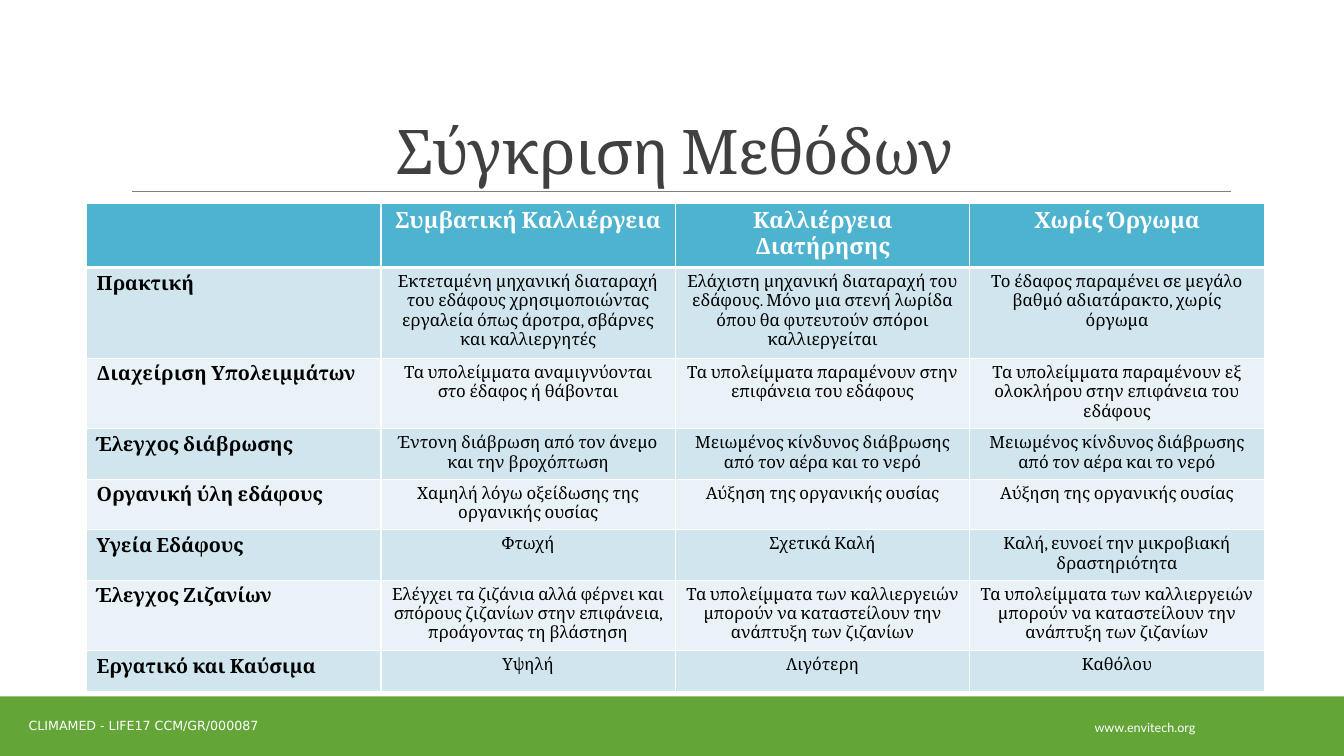
from lxml import etree
from pptx import Presentation
from pptx.dml.color import RGBColor
from pptx.enum.shapes import MSO_CONNECTOR, MSO_SHAPE
from pptx.enum.text import MSO_ANCHOR, PP_ALIGN
from pptx.oxml.ns import qn
from pptx.util import Cm, Pt

LEFT, CENTER = PP_ALIGN.LEFT, PP_ALIGN.CENTER
MIDDLE, BOTTOM = MSO_ANCHOR.MIDDLE, MSO_ANCHOR.BOTTOM
RECTANGLE = MSO_SHAPE.RECTANGLE
STRAIGHT = MSO_CONNECTOR.STRAIGHT

COLORS = {
    "white": "FFFFFF",
    "black": "000000",
    "title": "404040",
    "rule": "808080",
    "footer": "63A537",
    "header": "4EB3CF",
    "band_dark": "D0E5ED",
    "band_light": "E9F2F6",
}

HEADINGS = ["", "Συμβατική Καλλιέργεια", "Καλλιέργεια Διατήρησης", "Χωρίς Όργωμα"]
COMPARISON = [
    ["Πρακτική",
     "Εκτεταμένη μηχανική διαταραχή του εδάφους χρησιμοποιώντας εργαλεία όπως "
     "άροτρα, σβάρνες και καλλιεργητές",
     "Ελάχιστη μηχανική διαταραχή του εδάφους. Μόνο μια στενή λωρίδα όπου θα "
     "φυτευτούν σπόροι καλλιεργείται",
     "Το έδαφος παραμένει σε μεγάλο βαθμό αδιατάρακτο, χωρίς όργωμα"],
    ["Διαχείριση Υπολειμμάτων",
     "Τα υπολείμματα αναμιγνύονται στο έδαφος ή θάβονται",
     "Τα υπολείμματα παραμένουν στην επιφάνεια του εδάφους",
     "Τα υπολείμματα παραμένουν εξ ολοκλήρου στην επιφάνεια του εδάφους"],
    ["Έλεγχος διάβρωσης",
     "Έντονη διάβρωση από τον άνεμο και την βροχόπτωση",
     "Μειωμένος κίνδυνος διάβρωσης από τον αέρα και το νερό",
     "Μειωμένος κίνδυνος διάβρωσης από τον αέρα και το νερό"],
    ["Οργανική ύλη εδάφους",
     "Χαμηλή λόγω οξείδωσης της οργανικής ουσίας",
     "Αύξηση της οργανικής ουσίας",
     "Αύξηση της οργανικής ουσίας"],
    ["Υγεία Εδάφους",
     "Φτωχή",
     "Σχετικά Καλή",
     "Καλή, ευνοεί την μικροβιακή δραστηριότητα"],
    ["Έλεγχος Ζιζανίων",
     "Ελέγχει τα ζιζάνια αλλά φέρνει και σπόρους ζιζανίων στην επιφάνεια, "
     "προάγοντας τη βλάστηση",
     "Τα υπολείμματα των καλλιεργειών μπορούν να καταστείλουν την ανάπτυξη των ζιζανίων",
     "Τα υπολείμματα των καλλιεργειών μπορούν να καταστείλουν την ανάπτυξη των ζιζανίων"],
    ["Εργατικό και Καύσιμα", "Υψηλή", "Λιγότερη", "Καθόλου"],
]


class SlideBuilder:
    """Holds the style and the slide being filled."""

    def __init__(self, slide, font):
        self.slide = slide
        self.font = font

    def color(self, name):
        return RGBColor.from_string(COLORS[name])

    def format_text(self, paragraph, size, color, font=None, bold=False, align=CENTER):
        paragraph.alignment = align
        for run in paragraph.runs:
            run.font.name = font or self.font
            run.font.size = Pt(size)
            run.font.bold = bold
            run.font.color.rgb = self.color(color)

    def bar(self, left, top, width, height, color):
        bar = self.slide.shapes.add_shape(
            RECTANGLE, Cm(left), Cm(top), Cm(width), Cm(height))
        bar.shadow.inherit = False
        bar.fill.solid()
        bar.fill.fore_color.rgb = self.color(color)
        bar.line.fill.background()

    def rule(self, left, right, y, color, width):
        rule = self.slide.shapes.add_connector(
            STRAIGHT, Cm(left), Cm(y), Cm(right), Cm(y))
        rule.line.color.rgb = self.color(color)
        rule.line.width = Pt(width)
        etree.SubElement(rule._element.spPr, qn("a:effectLst"))

    def text(self, words, left, top, width, height, size, color, font=None, anchor=MIDDLE):
        box = self.slide.shapes.add_textbox(Cm(left), Cm(top), Cm(width), Cm(height))
        frame = box.text_frame
        frame.word_wrap = True
        frame.vertical_anchor = anchor
        frame.text = words
        paragraph = frame.paragraphs[0]
        self.format_text(paragraph, size, color, font)
        return paragraph

    def borders(self, cell, top, bottom):
        properties = cell._tc.get_or_add_tcPr()
        sides = {"a:lnL": 1, "a:lnR": 1, "a:lnT": top, "a:lnB": bottom}
        for position, (side, width) in enumerate(sides.items()):
            line = etree.Element(qn(side), w=str(Pt(width)))
            fill = etree.SubElement(line, qn("a:solidFill"))
            etree.SubElement(fill, qn("a:srgbClr"), val=COLORS["white"])
            properties.insert(position, line)

    def table(self, rows, left, top, column_width, row_height):
        columns = len(rows[0])
        table = self.slide.shapes.add_table(
            len(rows), columns, Cm(left), Cm(top),
            Cm(column_width * columns), Cm(row_height * len(rows))).table
        table.horz_banding = False
        for column in table.columns:
            column.width = Cm(column_width)
        for r, words in enumerate(rows):
            table.rows[r].height = Cm(row_height)
            band = "header" if r == 0 else "band_dark" if r % 2 else "band_light"
            for c, word in enumerate(words):
                cell = table.cell(r, c)
                cell.fill.solid()
                cell.fill.fore_color.rgb = self.color(band)
                self.borders(cell, top=3 if r == 1 else 1, bottom=3 if r == 0 else 1)
                cell.text_frame.text = word
                paragraph = cell.text_frame.paragraphs[0]
                if r == 0:
                    self.format_text(paragraph, 16, "white", bold=True)
                elif c == 0:
                    self.format_text(paragraph, 14, "black", bold=True, align=LEFT)
                else:
                    self.format_text(paragraph, 12, "black")


def main():
    deck = Presentation()
    deck.slide_width, deck.slide_height = Cm(33.87), Cm(19.05)
    builder = SlideBuilder(deck.slides.add_slide(deck.slide_layouts[6]), "Cambria")

    # Footer
    builder.bar(0, 17.55, 33.87, 1.5, "footer")
    builder.text("www.envitech.org", 25.73, 17.81, 6.25, 1.02, 9, "white", "Lato")
    builder.text("CLIMAMED - LIFE17 CCM/GR/000087", -0.41, 17.78, 8.05, 1.02,
                 9, "white", "DejaVu Sans")

    # Title and its rule
    builder.rule(3.33, 31.01, 4.83, "rule", 0.5)
    title = builder.text("Σύγκριση Μεθόδων", 3.05, 0.79, 27.94, 4.04,
                         44, "title", anchor=BOTTOM)
    title.line_spacing = 0.85
    title.runs[0].font._element.set("spc", "-50")

    # Comparison of the methods
    builder.table([HEADINGS] + COMPARISON, 2.18, 5.13, 7.42, 1.03)

    deck.save("out.pptx")


if __name__ == "__main__":
    main()
